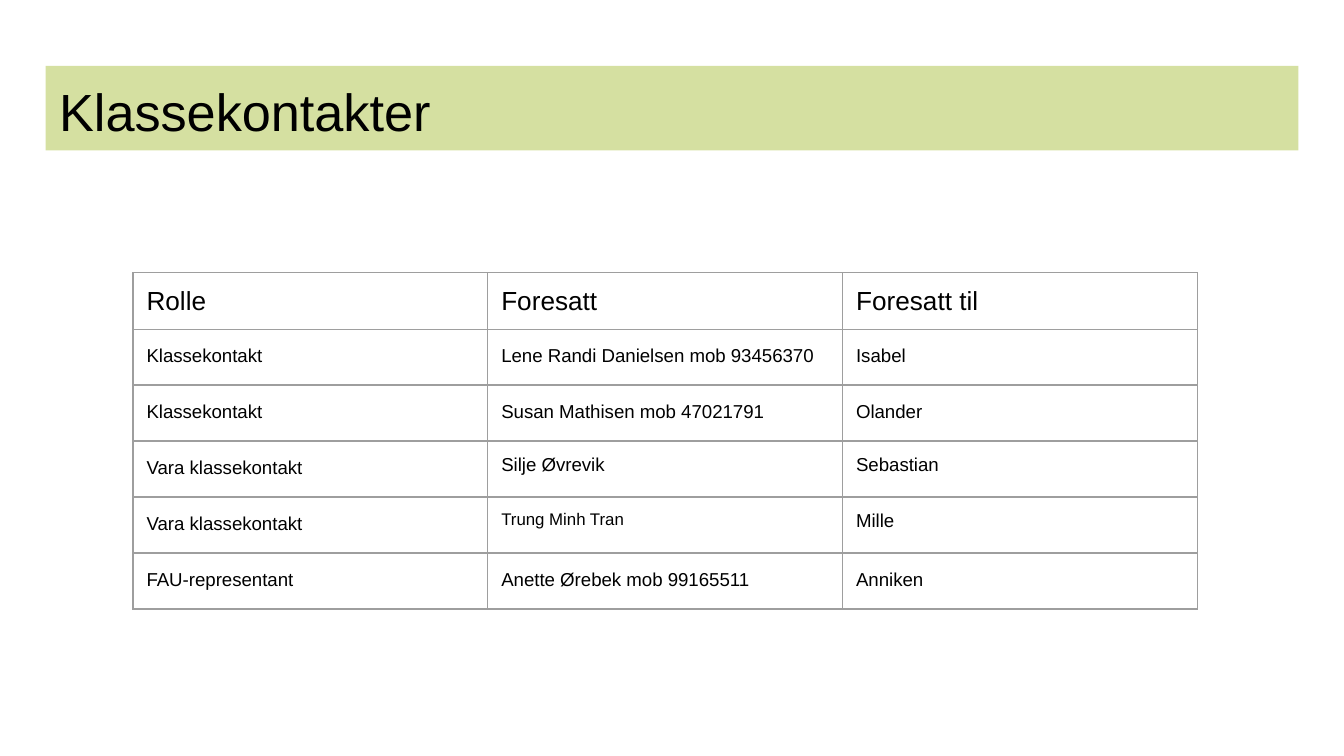
from lxml.etree import SubElement as Sub
from pptx import Presentation
from pptx.dml.color import RGBColor as RGB
from pptx.enum.text import MSO_ANCHOR as Anchor, MSO_AUTO_SIZE as Auto, PP_ALIGN as Align
from pptx.oxml.ns import qn
from pptx.util import Inches, Pt

GREEN = RGB(0xD5, 0xE0, 0xA1)
BLACK = RGB(0, 0, 0)
GREY = RGB(0x9E, 0x9E, 0x9E)
FONT = "Arial"
HEAD = ["Rolle", "Foresatt", "Foresatt til"]
ROWS = [
    ["Klassekontakt", "Lene Randi Danielsen mob 93456370", "Isabel"],
    ["Klassekontakt", "Susan Mathisen mob 47021791", "Olander"],
    ["Vara klassekontakt", "Silje Øvrevik", "Sebastian"],
    ["Vara klassekontakt", "Trung Minh Tran", "Mille"],
    ["FAU-representant", "Anette Ørebek mob 99165511", "Anniken"],
]
TIGHT = {"Silje Øvrevik", "Sebastian", "Trung Minh Tran", "Mille"}
SMALL = "Trung Minh Tran"


def style(para, size):
    para.alignment = Align.LEFT
    for run in para.runs:
        font = run.font
        font.name, font.size, font.bold = FONT, Pt(size), False
        font.color.rgb = BLACK


def pad(item):
    item.margin_left = item.margin_right = Inches(0.1)
    item.margin_top = item.margin_bottom = Inches(0.1)
    item.vertical_anchor = Anchor.TOP


def border(cell):
    props = cell._tc.get_or_add_tcPr()
    for spot, side in enumerate(("lnL", "lnR", "lnT", "lnB")):
        line = props.makeelement(qn(f"a:{side}"), {"w": str(Pt(0.75))})
        fill = Sub(line, qn("a:solidFill"))
        Sub(fill, qn("a:srgbClr"), val=str(GREY))
        props.insert(spot, line)


def add_title(slide, left, top, width, height):
    title = slide.shapes.title
    title.left, title.top = Inches(left), Inches(top)
    title.width, title.height = Inches(width), Inches(height)
    title.fill.solid()
    title.fill.fore_color.rgb = GREEN
    frame = title.text_frame
    frame.text = "Klassekontakter"
    frame.word_wrap = True
    frame.auto_size = Auto.NONE
    pad(frame)
    style(frame.paragraphs[0], 28)


def fill_cell(cell, text, size, loose):
    cell.fill.background()
    border(cell)
    pad(cell)
    cell.text_frame.text = text
    para = cell.text_frame.paragraphs[0]
    style(para, size)
    if loose:
        para.line_spacing = 1.15
        para.space_before = para.space_after = Pt(12)


def add_grid(slide, left, top, width, height):
    data = [HEAD] + ROWS
    frame = slide.shapes.add_table(len(data), len(HEAD), Inches(left), Inches(top),
                                   Inches(width), Inches(height))
    table = frame.table
    table.first_row = table.horz_banding = False
    for r, row in enumerate(data):
        for c, text in enumerate(row):
            size = 14 if r == 0 else 9 if text == SMALL else 10
            fill_cell(table.cell(r, c), text, size, r > 0 and text not in TIGHT)


def main():
    deck = Presentation()
    deck.slide_width = Inches(10)
    deck.slide_height = deck.slide_width * 9 // 16
    slide = deck.slides.add_slide(deck.slide_layouts[5])
    add_title(slide, 0.34, 0.49, 9.32, 0.63)
    add_grid(slide, 0.99, 2.03, 7.92, 2.5)
    deck.save("out.pptx")


if __name__ == "__main__":
    main()
